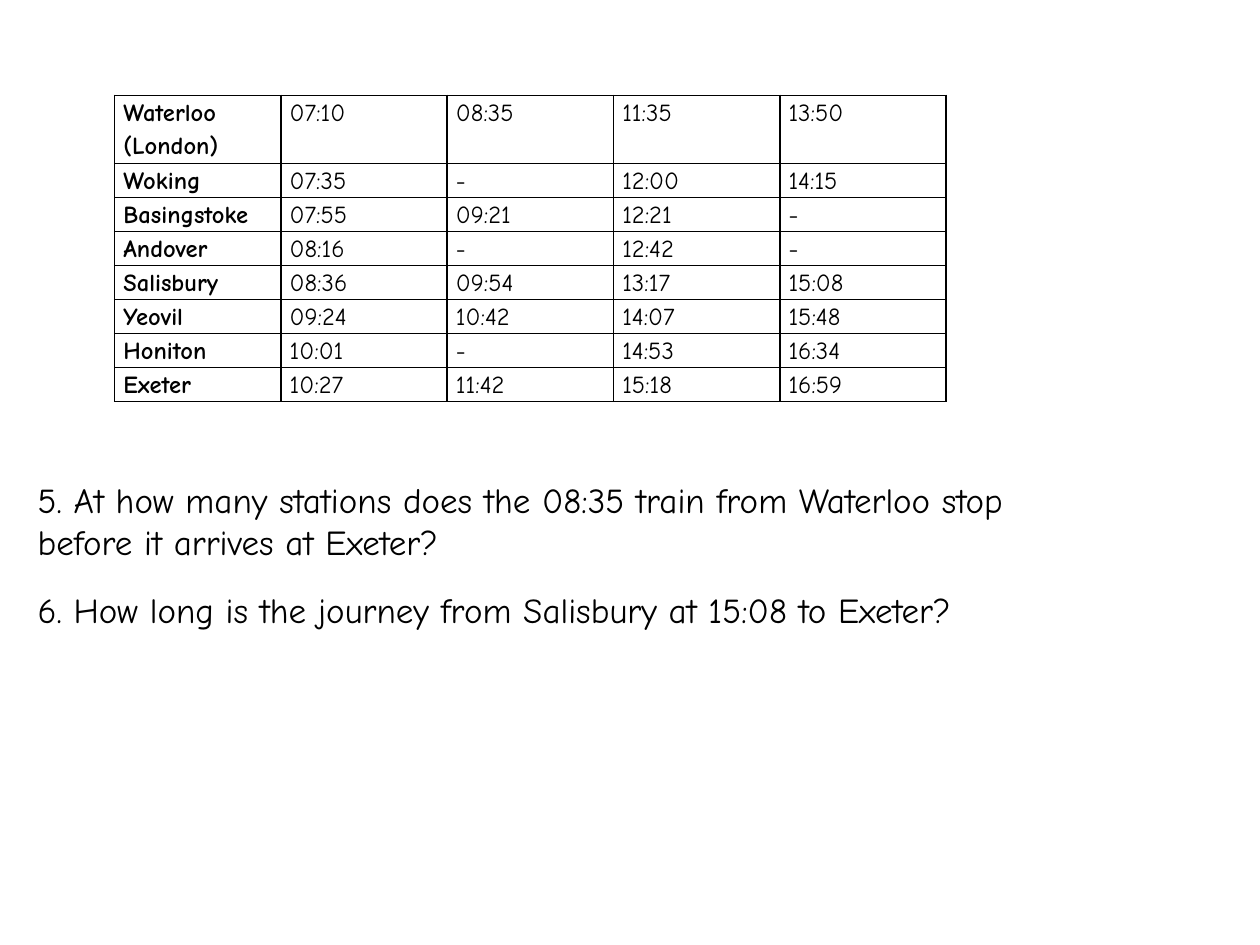
from lxml.etree import SubElement as Sub
from pptx import Presentation
from pptx.dml.color import RGBColor as RGB
from pptx.enum.text import MSO_AUTO_SIZE as AutoSize
from pptx.oxml.ns import qn
from pptx.util import Inches, Pt

W, H = 10, 7.5
FONT = "Comic Neue"
BLACK = "000000"
COL_W, ROW_H = 1.32, 0.27
TIMETABLE = [
    ("Waterloo (London)", "07:10", "08:35", "11:35", "13:50"),
    ("Woking", "07:35", "-", "12:00", "14:15"),
    ("Basingstoke", "07:55", "09:21", "12:21", "-"),
    ("Andover", "08:16", "-", "12:42", "-"),
    ("Salisbury", "08:36", "09:54", "13:17", "15:08"),
    ("Yeovil", "09:24", "10:42", "14:07", "15:48"),
    ("Honiton", "10:01", "-", "14:53", "16:34"),
    ("Exeter", "10:27", "11:42", "15:18", "16:59"),
]
QUESTIONS = [
    ("5. At how many stations does the 08:35 train from Waterloo stop "
     "before it arrives at Exeter?", 0.5, 0.858),
    ("6. How long is the journey from Salisbury at 15:08 to Exeter?", 0.616, 0.756),
]


def color(hex_value):
    return RGB.from_string(hex_value)


def add_run(p, text, size, bold=False):
    r = p.add_run()
    r.text = text
    r.font.name = FONT
    r.font.size = Pt(size)
    r.font.bold = bold
    r.font.color.rgb = color(BLACK)


def add_borders(cell, hex_value, width):
    tc_pr = cell._tc.get_or_add_tcPr()
    for side in ("lnL", "lnR", "lnT", "lnB"):
        ln = Sub(tc_pr, qn(f"a:{side}"), w=str(Pt(width)))
        Sub(Sub(ln, qn("a:solidFill")), qn("a:srgbClr"), val=hex_value)


def fill_cell(cell, text, bold):
    cell.margin_left = cell.margin_right = Inches(0.07)
    cell.margin_top = cell.margin_bottom = 0
    add_borders(cell, BLACK, 1)
    cell.fill.background()
    p = cell.text_frame.paragraphs[0]
    p.line_spacing = 1.15
    add_run(p, text, 14, bold)


def add_timetable(s, rows, left, top):
    n_rows, n_cols = len(rows), len(rows[0])
    table = s.shapes.add_table(
        n_rows, n_cols, Inches(left * W), Inches(top * H),
        Inches(n_cols * COL_W), Inches((n_rows + 1) * ROW_H)).table
    table.first_row = table.horz_banding = False
    for col in table.columns:
        col.width = Inches(COL_W)
    for i, row in enumerate(rows):
        table.rows[i].height = Inches(ROW_H * (2 if i == 0 else 1))
        for j, text in enumerate(row):
            fill_cell(table.cell(i, j), text, bold=j == 0)


def add_question(s, text, top, width):
    sp = s.shapes.add_textbox(Inches(0.02 * W), Inches(top * H),
                              Inches(width * W), Inches(0.77))
    tf = sp.text_frame
    tf.word_wrap = True
    tf.auto_size = AutoSize.SHAPE_TO_FIT_TEXT
    add_run(tf.paragraphs[0], text, 20)


def main():
    prs = Presentation()
    prs.slide_width, prs.slide_height = Inches(W), Inches(H)
    s = prs.slides.add_slide(prs.slide_layouts[6])
    add_timetable(s, TIMETABLE, 0.091, 0.101)
    for text, top, width in QUESTIONS:
        add_question(s, text, top, width)
    prs.save("out.pptx")


if __name__ == "__main__":
    main()
